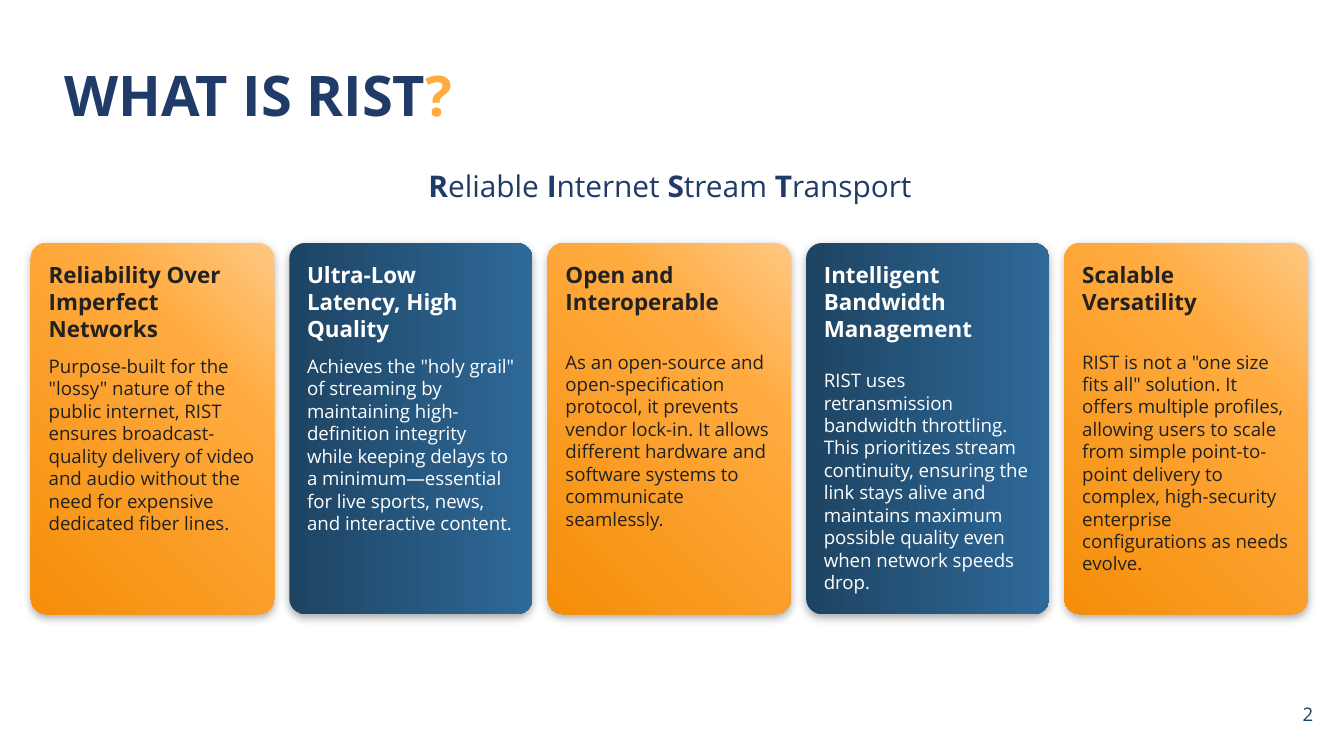
from lxml import etree
from pptx import Presentation
from pptx import util as u
from pptx.dml.color import RGBColor
from pptx.enum import shapes, text
from pptx.oxml import ns

FONT = "Open Sans"
NAVY = RGBColor(0x20, 0x3B, 0x68)
DEEP = RGBColor(0x1E, 0x44, 0x63)
BLUE = RGBColor(0x2E, 0x69, 0x98)
PEACH = RGBColor(0xFF, 0xC8, 0x82)
AMBER = RGBColor(0xFF, 0xAB, 0x40)
ORANGE = RGBColor(0xF5, 0x8E, 0x09)
INK = RGBColor(0x21, 0x21, 0x21)
WHITE = RGBColor(0xFF, 0xFF, 0xFF)
GRAY = RGBColor(0x59, 0x59, 0x59)

# Text colour, gradient angle, gradient stops
WARM = (INK, 135, [(0, PEACH), (30, AMBER), (100, ORANGE)])
COOL = (WHITE, 0, [(0, DEEP), (100, BLUE)])

# Heading, gap below it in points, body
CARDS = [
    ("Reliability Over Imperfect Networks", 7,
     'Purpose-built for the "lossy" nature of the public internet, RIST '
     "ensures broadcast-quality delivery of video and audio without the "
     "need for expensive dedicated fiber lines."),
    ("Ultra-Low Latency, High Quality", 7,
     'Achieves the "holy grail" of streaming by maintaining high-definition '
     "integrity while keeping delays to a minimum—essential for live sports, "
     "news, and interactive content."),
    ("Open and Interoperable", 19,
     "As an open-source and open-specification protocol, it prevents vendor "
     "lock-in. It allows different hardware and software systems to "
     "communicate seamlessly."),
    ("Intelligent Bandwidth Management", 14.5,
     "RIST uses retransmission bandwidth throttling. This prioritizes stream "
     "continuity, ensuring the link stays alive and maintains maximum "
     "possible quality even when network speeds drop."),
    ("Scalable Versatility", 19,
     'RIST is not a "one size fits all" solution. It offers multiple '
     "profiles, allowing users to scale from simple point-to-point delivery "
     "to complex, high-security enterprise configurations as needs evolve."),
]

# The row of cards: left, top, full span, then one card and the column step
LEFT, TOP, SPAN = 0.23, 1.81, 9.5
WIDE, HIGH = 1.81, 2.76
STEP = (SPAN - WIDE) / (len(CARDS) - 1)


def style(font, size, color, bold=False):
    font.name = FONT
    font.size = u.Pt(size)
    font.color.rgb = color
    font.bold = bold


def setup(frame, anchor=text.MSO_ANCHOR.TOP):
    """Wrap the text and give it even insets."""
    frame.word_wrap = True
    frame.vertical_anchor = anchor
    frame.margin_left = frame.margin_right = u.Inches(0.1)
    frame.margin_top = frame.margin_bottom = u.Inches(0.1)


def label(slide, box, parts, size, align, anchor=text.MSO_ANCHOR.TOP):
    """Add one line of text from (words, colour, bold) parts."""
    frame = slide.shapes.add_textbox(*map(u.Inches, box)).text_frame
    setup(frame, anchor)
    para = frame.paragraphs[0]
    para.alignment = align
    for words, color, bold in parts:
        run = para.add_run()
        run.text = words
        style(run.font, size, color, bold)


def tint(node, color):
    return etree.SubElement(node, ns.qn("a:srgbClr"), val=str(color))


def shade(shape, angle, stops):
    shape.fill.gradient()
    grad = shape.element.spPr.find(ns.qn("a:gradFill"))
    grad.find(ns.qn("a:lin")).set("ang", str(angle * 60000))
    group = grad.find(ns.qn("a:gsLst"))
    for old in list(group):
        group.remove(old)
    for place, color in stops:
        stop = etree.SubElement(group, ns.qn("a:gs"), pos=str(place * 1000))
        tint(stop, color)


def lift(shape):
    """Give the shape a soft shadow straight below it."""
    shape.shadow.inherit = False
    group = shape.element.spPr.find(ns.qn("a:effectLst"))
    drop = etree.SubElement(
        group, ns.qn("a:outerShdw"), blurRad=str(u.Pt(4.5)),
        dist=str(u.Pt(1.5)), dir="5400000", algn="bl", rotWithShape="0")
    etree.SubElement(tint(drop, GRAY), ns.qn("a:alpha"), val="50000")


def card(slide, col, head, gap, body):
    color, angle, stops = COOL if col % 2 else WARM
    box = (LEFT + col * STEP, TOP, WIDE, HIGH)
    shape = slide.shapes.add_shape(
        shapes.MSO_SHAPE.ROUNDED_RECTANGLE, *map(u.Inches, box))
    shape.adjustments[0] = 0.064
    shade(shape, angle, stops)
    shape.line.fill.background()
    lift(shape)
    frame = shape.text_frame
    setup(frame)
    frame.text = head + "\n" + body
    for para, size, bold in zip(frame.paragraphs, (12, 10), (True, False)):
        para.alignment = text.PP_ALIGN.LEFT
        style(para.runs[0].font, size, color, bold)
    frame.paragraphs[1].space_before = u.Pt(gap)


def main():
    deck = Presentation()
    deck.slide_width = u.Inches(10)
    deck.slide_height = deck.slide_width * 9 // 16
    slide = deck.slides.add_slide(deck.slide_layouts[6])
    align = text.PP_ALIGN
    label(slide, (9.27, 5.1, 0.6, 0.43), [("2", DEEP, False)], 10,
          align.RIGHT, text.MSO_ANCHOR.MIDDLE)
    label(slide, (0.38, 0.35, 9.24, 1.18),
          [("WHAT IS RIST", NAVY, True), ("?", AMBER, True)], 30, align.LEFT)
    parts = []
    for word in ("Reliable ", "Internet ", "Stream ", "Transport"):
        parts += [(word[0], NAVY, True), (word[1:], NAVY, False)]
    label(slide, (0.24, 1.15, 9.49, 0.41), parts, 16, align.CENTER)
    for col, item in enumerate(CARDS):
        card(slide, col, *item)
    deck.save("out.pptx")


if __name__ == "__main__":
    main()
